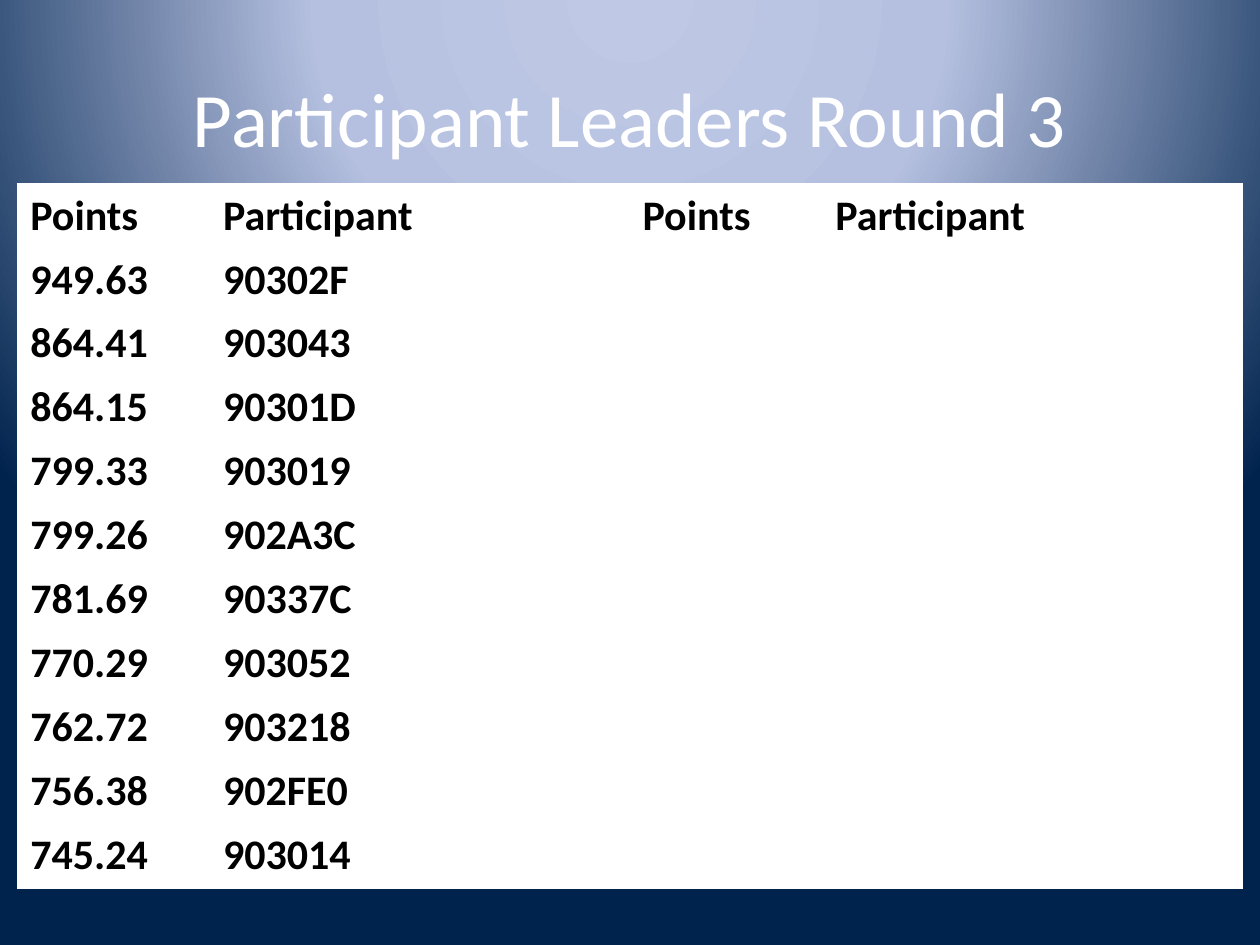
import pptx
import pptx.dml.color
import pptx.enum.text
import pptx.oxml.ns
import pptx.util
from lxml import etree

Inches = pptx.util.Inches
Pt = pptx.util.Pt
qn = pptx.oxml.ns.qn

HEADINGS = ["Points", "Participant"] * 2
LEADERS = [
    ("949.63", "90302F"),
    ("864.41", "903043"),
    ("864.15", "90301D"),
    ("799.33", "903019"),
    ("799.26", "902A3C"),
    ("781.69", "90337C"),
    ("770.29", "903052"),
    ("762.72", "903218"),
    ("756.38", "902FE0"),
    ("745.24", "903014"),
]


def color(hex_value):
    return pptx.dml.color.RGBColor.from_string(hex_value)


def write_text(frame, text, size, hex_value, font="Calibri", bold=False, align=None):
    paragraph = frame.paragraphs[0]
    paragraph.alignment = align
    run = paragraph.add_run()
    run.text = text
    run.font.name = font
    run.font.size = Pt(size)
    run.font.bold = bold
    run.font.color.rgb = color(hex_value)


def add_node(parent, tag, **attributes):
    return etree.SubElement(parent, qn(tag), attributes)


class LeaderSlide:
    white = "FFFFFF"
    black = "000000"

    def __init__(self, presentation):
        self.slide = presentation.slides.add_slide(presentation.slide_layouts[5])

    def background(self, stops):
        """Fill with a circular gradient centred above the slide."""
        self.slide.background.fill.gradient()
        gradient = next(self.slide.element.iter(qn("a:gradFill")))
        for child in list(gradient):
            gradient.remove(child)
        stop_list = add_node(gradient, "a:gsLst")
        for percent, hex_value in stops:
            stop = add_node(stop_list, "a:gs", pos=str(percent * 1000))
            add_node(stop, "a:srgbClr", val=hex_value)
        circle = add_node(gradient, "a:path", path="circle")
        add_node(circle, "a:fillToRect", l="50000", t="-80000", r="50000", b="180000")

    def title(self, text, left, top, width, height):
        heading = self.slide.shapes.title
        heading.left, heading.top = Inches(left), Inches(top)
        heading.width, heading.height = Inches(width), Inches(height)
        heading.text_frame.vertical_anchor = pptx.enum.text.MSO_ANCHOR.MIDDLE
        write_text(heading.text_frame, text, 44, self.white,
                   align=pptx.enum.text.PP_ALIGN.CENTER)

    def borders(self, cell, bottom):
        properties = cell._tc.get_or_add_tcPr()
        for side, points in (("L", 1), ("R", 1), ("T", 1), ("B", bottom)):
            line = add_node(properties, f"a:ln{side}", w=str(Pt(points)))
            fill = add_node(line, "a:solidFill")
            add_node(fill, "a:srgbClr", val=self.white)

    def table(self, rows, left, top, widths, row_height):
        table = self.slide.shapes.add_table(
            len(rows), len(widths), Inches(left), Inches(top),
            Inches(sum(widths)), Inches(row_height * len(rows))).table
        for column, width in zip(table.columns, widths):
            column.width = Inches(width)
        for row_index, values in enumerate(rows):
            last = row_index == len(rows) - 1
            for column_index in range(len(widths)):
                cell = table.cell(row_index, column_index)
                self.borders(cell, bottom=3 if last else 1)
                cell.fill.solid()
                cell.fill.fore_color.rgb = color(self.white)
                if column_index < len(values):
                    write_text(cell.text_frame, values[column_index], 24,
                               self.black, bold=True)


def main():
    presentation = pptx.Presentation()
    presentation.slide_width = Inches(10)
    presentation.slide_height = Inches(7.5)
    leaders = LeaderSlide(presentation)
    leaders.background([(0, "BFC9E5"), (40, "B5C0E0"), (100, "00234D")])
    leaders.title("Participant Leaders Round 3", 0.5, 0.3, 9, 1.25)
    leaders.table([HEADINGS, *LEADERS], 0.14, 1.46, [1.53, 3.33] * 2, 0.5)
    presentation.save("out.pptx")


if __name__ == "__main__":
    main()
